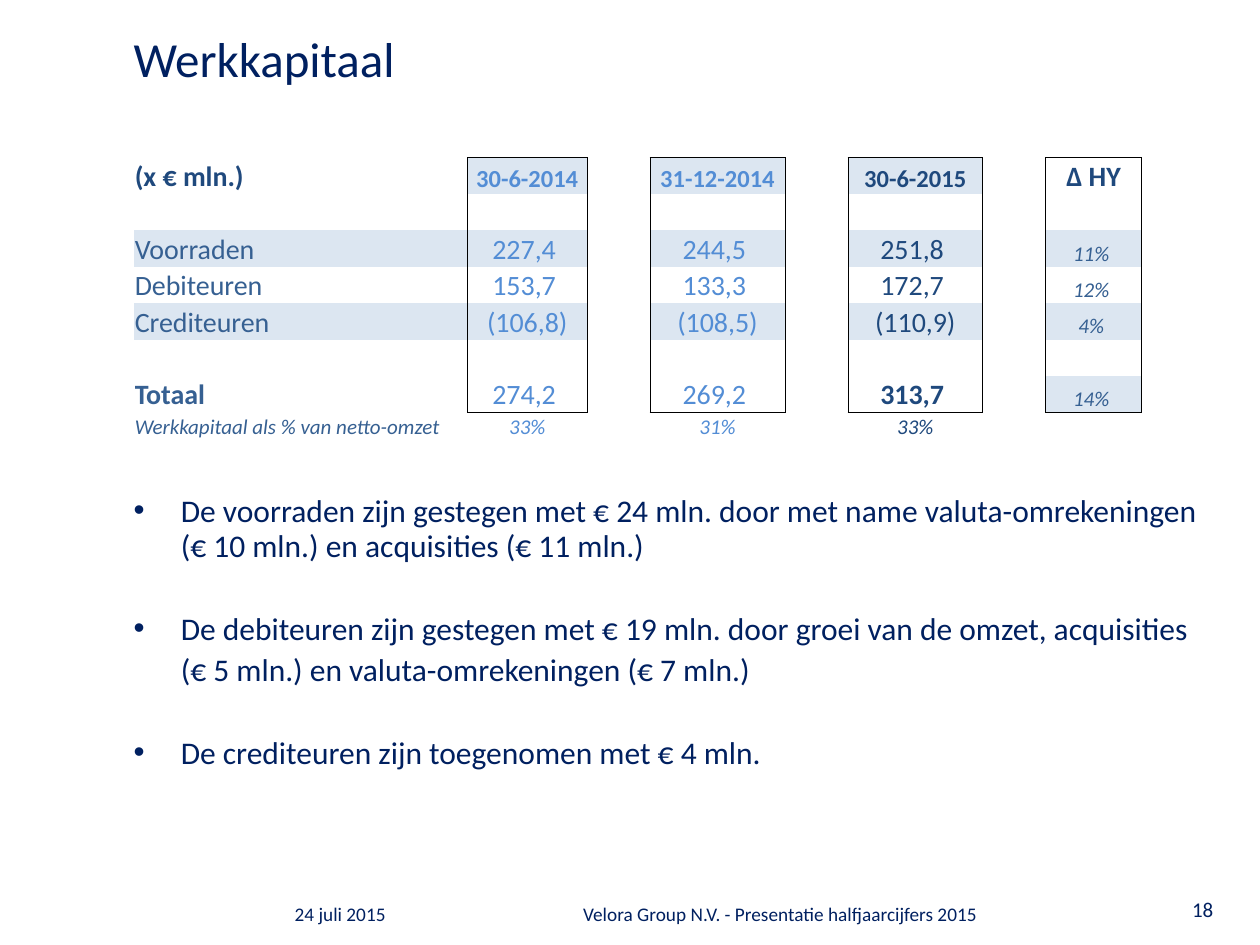
from lxml import etree
from pptx import Presentation
from pptx import util as u
from pptx.dml.color import RGBColor
from pptx.enum import text
from pptx.oxml.ns import qn

NAVY, DARK, STEEL, SKY = "002060", "1F497D", "366092", "538DD5"
BAND, WHITE, BLACK = "DCE6F1", "FFFFFF", "000000"
NO_STYLE = "{2D5ABB26-0587-4C30-8999-92F81FD0307C}"
BOXED = (1, 3, 5, 7)
COLUMN_COLORS = {0: STEEL, 1: SKY, 3: SKY, 5: DARK, 7: STEEL}
COLUMN_WIDTHS = [26.5, 9.5, 5, 10.7, 5, 10.7, 5, 7.6]
ROW_HEIGHTS = [2.89] * 7 + [2.2]
HEADER, TOTAL, RATIO = 0, 6, 7

FIGURES = [
    ["(x € mln.)", "30-6-2014", "31-12-2014", "30-6-2015", "∆ HY"],
    [""] * 5,
    ["Voorraden", "227,4 ", "244,5 ", "251,8 ", "11% "],
    ["Debiteuren", "153,7 ", "133,3 ", "172,7 ", "12% "],
    ["Crediteuren", "(106,8)", "(108,5)", "(110,9)", "4% "],
    [""] * 5,
    ["Totaal", "274,2 ", "269,2 ", "313,7 ", "14% "],
    ["Werkkapitaal als % van netto-omzet", "33%", "31%", "33%", ""],
]

REMARKS = [
    ("De voorraden zijn gestegen met € 24 mln. door met name valuta-omrekeningen\n"
     "(€ 10 mln.) en acquisities (€ 11 mln.)", True, 0),
    ("De debiteuren zijn gestegen met € 19 mln. door groei van de omzet, acquisities", True, 27.2),
    ("(€ 5 mln.) en valuta-omrekeningen (€ 7 mln.)", False, 3.6),
    ("De crediteuren zijn toegenomen met € 4 mln.", True, 27.2),
]


def rgb(code):
    return RGBColor.from_string(code)


def write(paragraph, words, size=16, color=NAVY, bold=False, italic=False,
          align=None, line=None, before=0):
    paragraph.text = words
    paragraph.alignment = align
    paragraph.space_before = u.Pt(before)
    if line:
        paragraph.line_spacing = u.Pt(line)
    for run in paragraph.runs:
        font = run.font
        font.name, font.size = "Calibri", u.Pt(size)
        font.bold, font.italic = bold, italic
        font.color.rgb = rgb(color)
    if not words:
        etree.SubElement(paragraph._p, qn("a:endParaRPr"), sz=str(size * 100))


class Deck:
    def __init__(self):
        self.file = Presentation()
        self.file.slide_width, self.file.slide_height = u.Inches(10), u.Inches(7.5)
        self.unit = self.file.slide_width / 100
        self.slide = self.file.slides.add_slide(self.file.slide_layouts[1])

    def grid(self, *lengths):
        return [u.Emu(round(length * self.unit)) for length in lengths]

    def place(self, holder, box):
        holder.left, holder.top, holder.width, holder.height = self.grid(*box)
        frame = holder.text_frame
        frame.margin_left = frame.margin_right = frame.margin_top = frame.margin_bottom = 0
        frame.vertical_anchor = text.MSO_ANCHOR.TOP
        frame.auto_size = text.MSO_AUTO_SIZE.NONE
        frame.word_wrap = True
        return frame

    def title(self, words, box):
        frame = self.place(self.slide.shapes.title, box)
        write(frame.paragraphs[0], words, size=28, line=30, align=text.PP_ALIGN.LEFT)

    def bullets(self, remarks, box):
        frame = self.place(self.slide.placeholders[1], box)
        for index, (words, bulleted, before) in enumerate(remarks):
            paragraph = frame.add_paragraph() if index else frame.paragraphs[0]
            if not bulleted:
                properties = paragraph._p.get_or_add_pPr()
                properties.set("indent", "0")
                etree.SubElement(properties, qn("a:buNone"))
            write(paragraph, words, size=18, line=20, before=before)

    def label(self, words, box, **style):
        frame = self.slide.shapes.add_textbox(*self.grid(*box)).text_frame
        frame.word_wrap = True
        write(frame.paragraphs[0], words, **style)

    def border(self, cell, sides):
        properties = cell._tc.get_or_add_tcPr()
        for side in sides:
            edge = etree.SubElement(properties, qn("a:ln" + side), w=str(u.Pt(0.5)))
            fill = etree.SubElement(edge, qn("a:solidFill"))
            etree.SubElement(fill, qn("a:srgbClr"), val=BLACK)

    def cell_style(self, row, column):
        outer = column in (0, 7)
        style = dict(color=COLUMN_COLORS.get(column, NAVY),
                     align=text.PP_ALIGN.CENTER if column else text.PP_ALIGN.LEFT)
        if row == HEADER:
            style.update(size=16 if outer else 14, bold=True)
            if outer:
                style["color"] = DARK
        elif row == RATIO or column == 7:
            style.update(size=12, italic=True)
        elif row == TOTAL:
            style["bold"] = column in (0, 5)
        return style

    def is_banded(self, row, column):
        return (row == HEADER and column in (1, 3, 5)
                or row in (2, 4) and column in (0,) + BOXED
                or row == TOTAL and column == 7)

    def table(self, figures, left, top):
        box = (left, top, sum(COLUMN_WIDTHS), sum(ROW_HEIGHTS))
        table = self.slide.shapes.add_table(
            len(ROW_HEIGHTS), len(COLUMN_WIDTHS), *self.grid(*box)).table
        table.first_row = table.horz_banding = False
        table._tbl.tblPr.find(qn("a:tableStyleId")).text = NO_STYLE
        for column, width in zip(table.columns, self.grid(*COLUMN_WIDTHS)):
            column.width = width
        for row, height in zip(table.rows, self.grid(*ROW_HEIGHTS)):
            row.height = height
        for row, values in enumerate(figures):
            filled = dict(zip((0,) + BOXED, values))
            for column in range(len(COLUMN_WIDTHS)):
                cell = table.cell(row, column)
                cell.margin_left = cell.margin_right = cell.margin_top = u.Inches(0.01)
                cell.margin_bottom = 0
                cell.vertical_anchor = text.MSO_ANCHOR.BOTTOM
                if column in BOXED and row <= TOTAL:
                    self.border(cell, ["L", "R"] + ["T"] * (row == HEADER)
                                + ["B"] * (row == TOTAL))
                cell.fill.solid()
                cell.fill.fore_color.rgb = rgb(BAND if self.is_banded(row, column) else WHITE)
                style = self.cell_style(row, column)
                write(cell.text_frame.paragraphs[0], filled.get(column, ""), **style)


def main():
    deck = Deck()
    deck.title("Werkkapitaal", (10.6, 2.8, 86.6, 9.4))
    deck.bullets(REMARKS, (10.6, 39.2, 87.6, 31.5))
    deck.label("24 juli 2015", (22.4, 71.1, 16.9, 3.3), size=11)
    deck.label("Velora Group N.V. - Presentatie halfjaarcijfers 2015",
               (45.3, 71.1, 45.7, 3.3), size=11)
    deck.label("18", (91.7, 70.7, 7.5, 3.7), size=12, align=text.PP_ALIGN.CENTER)
    deck.table(FIGURES, 10.6, 12.5)
    deck.file.save("out.pptx")


if __name__ == "__main__":
    main()
